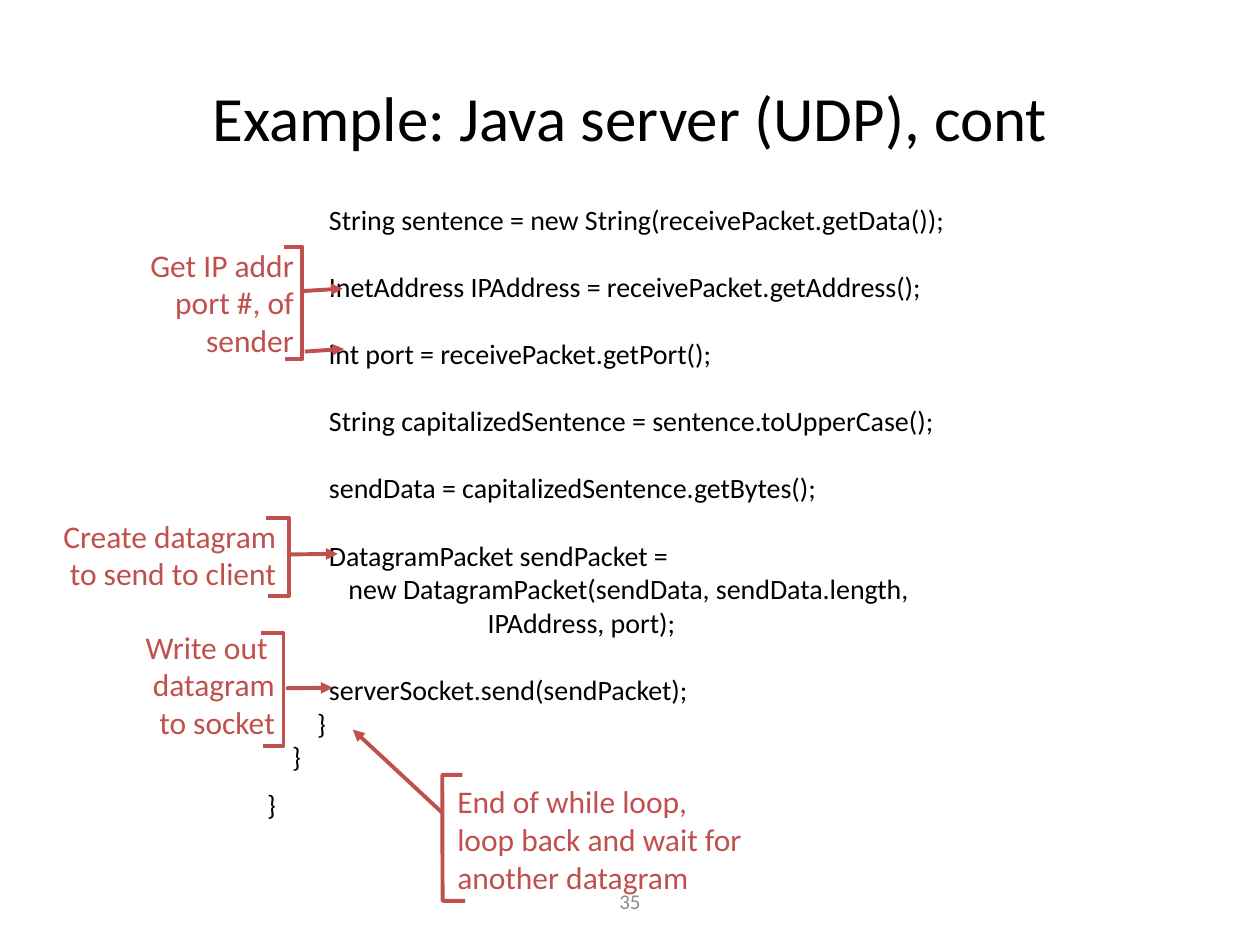
from dataclasses import dataclass

from lxml.etree import SubElement
from pptx import Presentation
from pptx.dml.color import RGBColor
from pptx.enum.shapes import MSO_CONNECTOR
from pptx.enum.text import MSO_ANCHOR, MSO_AUTO_SIZE, PP_ALIGN
from pptx.oxml.ns import qn
from pptx.util import Pt


@dataclass(frozen=True)
class Theme:
    font: str = "Calibri"
    ink: RGBColor = RGBColor(0x00, 0x00, 0x00)
    accent: RGBColor = RGBColor(0xC0, 0x50, 0x4D)
    muted: RGBColor = RGBColor(0x8C, 0x8C, 0x8C)
    title_size: float = 36
    code_size: float = 16
    note_size: float = 18
    number_size: float = 12
    line_width: float = 2.25


@dataclass(frozen=True)
class CodeLine:
    text: str
    indent: float
    before: float = 0


@dataclass(frozen=True)
class Note:
    lines: tuple[str, ...]
    box: tuple[float, float, float, float]
    bracket: tuple[tuple[float, float], ...]
    arrows: tuple[tuple[float, float, float, float], ...]
    align: PP_ALIGN = PP_ALIGN.RIGHT


THEME = Theme()
STATEMENT = 35.4  # indent of a statement inside the loop
GAP = 19.2  # one open line between statements

CODE = (
    CodeLine("String sentence = new String(receivePacket.getData());", STATEMENT),
    CodeLine("InetAddress IPAddress = receivePacket.getAddress();", STATEMENT, GAP),
    CodeLine("int port = receivePacket.getPort();", STATEMENT, GAP),
    CodeLine("String capitalizedSentence = sentence.toUpperCase();", STATEMENT, GAP),
    CodeLine("sendData = capitalizedSentence.getBytes();", STATEMENT, GAP),
    CodeLine("DatagramPacket sendPacket =", STATEMENT, GAP),
    CodeLine("new DatagramPacket(sendData, sendData.length,", 46.5),
    CodeLine("IPAddress, port);", 126),
    CodeLine("serverSocket.send(sendPacket);", STATEMENT, GAP),
    CodeLine("}", 28.6),
    CodeLine("}", 14.3),
    CodeLine("}", 0, 8),
)

NOTES = (
    Note(("Get IP addr", "port #, of", "sender"), (10, 136.8, 165, 72),
         ((162, 141.1), (172.8, 141.1), (172.8, 205.2), (162.7, 205.2)),
         ((173.8, 166.3, 195.8, 164.9), (174.2, 200.9, 196.6, 199.4))),
    Note(("Create datagram", "to send to client"), (9.4, 291.6, 155.5, 50.4),
         ((151.9, 295.9), (164.9, 295.9), (164.9, 340.6), (153.4, 340.6)),
         ((166.3, 316.8, 193, 316.5),)),
    Note(("Write out ", "datagram", "to socket"), (60.5, 355, 103.7, 72),
         ((149, 361.8), (162, 361.8), (162, 426.2), (150.5, 426.2)),
         ((163.4, 393.3, 190.1, 393),)),
    Note(("End of while loop,", "loop back and wait for", "another datagram"),
         (254.2, 443.5, 200.2, 72),
         ((264.2, 442.8), (252.7, 442.8), (252.9, 514.8), (265.7, 514.8)),
         ((252.7, 464.4, 201.6, 416.9),), PP_ALIGN.LEFT),
)


def place(shape, left: float, top: float, width: float, height: float) -> None:
    shape.left, shape.top = Pt(left), Pt(top)
    shape.width, shape.height = Pt(width), Pt(height)


def write(paragraph, text: str, *, size: float, color: RGBColor,
          align: PP_ALIGN = PP_ALIGN.LEFT, before: float = 0) -> None:
    paragraph.alignment = align
    paragraph.space_before = Pt(before)
    run = paragraph.add_run()
    run.text = text
    run.font.name = THEME.font
    run.font.size = Pt(size)
    run.font.color.rgb = color


def paragraph_at(frame, index: int):
    return frame.add_paragraph() if index else frame.paragraphs[0]


def add_label(slide, lines: tuple[str, ...], box: tuple[float, float, float, float], *,
              size: float, color: RGBColor, align: PP_ALIGN) -> None:
    frame = slide.shapes.add_textbox(*map(Pt, box)).text_frame
    frame.word_wrap = True
    frame.vertical_anchor = MSO_ANCHOR.MIDDLE
    for index, line in enumerate(lines):
        write(paragraph_at(frame, index), line, size=size, color=color, align=align)


def style_line(shape) -> None:
    shape.line.color.rgb = THEME.accent
    shape.line.width = Pt(THEME.line_width)


def add_bracket(slide, points: tuple[tuple[float, float], ...]) -> None:
    start, *rest = [(Pt(x), Pt(y)) for x, y in points]
    builder = slide.shapes.build_freeform(*start)
    builder.add_line_segments(rest, close=False)
    bracket = builder.convert_to_shape()
    bracket.fill.background()
    bracket.shadow.inherit = False
    style_line(bracket)


def add_arrow(slide, ends: tuple[float, float, float, float]) -> None:
    arrow = slide.shapes.add_connector(MSO_CONNECTOR.STRAIGHT, *map(Pt, ends))
    style_line(arrow)
    SubElement(arrow.line._get_or_add_ln(), qn("a:tailEnd"), type="triangle")
    SubElement(arrow._element.spPr, qn("a:effectLst"))


def fill_title(slide) -> None:
    title = slide.shapes.title
    place(title, 36, 21.6, 648, 90)
    title.text_frame.vertical_anchor = MSO_ANCHOR.MIDDLE
    write(title.text_frame.paragraphs[0], "Example: Java server (UDP), cont",
          size=THEME.title_size, color=THEME.ink, align=PP_ALIGN.CENTER)


def fill_code(slide) -> None:
    body = slide.placeholders[1]
    place(body, 145.4, 112, 456, 362)
    frame = body.text_frame
    frame.auto_size = MSO_AUTO_SIZE.NONE
    frame.vertical_anchor = MSO_ANCHOR.TOP
    for index, line in enumerate(CODE):
        paragraph = paragraph_at(frame, index)
        write(paragraph, line.text, size=THEME.code_size, color=THEME.ink,
              before=line.before)
        # Plain code lines: no bullet, indent by nesting
        properties = paragraph._p.get_or_add_pPr()
        properties.set("marL", str(Pt(line.indent)))
        properties.set("indent", "0")
        SubElement(properties, qn("a:buNone"))


def main() -> None:
    presentation = Presentation()
    presentation.slide_width, presentation.slide_height = Pt(720), Pt(540)
    slide = presentation.slides.add_slide(presentation.slide_layouts[1])

    # Title and program text
    fill_title(slide)
    fill_code(slide)

    # Explanations with bracket and arrows
    for note in NOTES:
        add_label(slide, note.lines, note.box, size=THEME.note_size,
                  color=THEME.accent, align=note.align)
        add_bracket(slide, note.bracket)
        for ends in note.arrows:
            add_arrow(slide, ends)

    # Slide number
    add_label(slide, ("35",), (246, 500.5, 228, 28.8), size=THEME.number_size,
              color=THEME.muted, align=PP_ALIGN.CENTER)

    presentation.save("out.pptx")


if __name__ == "__main__":
    main()
